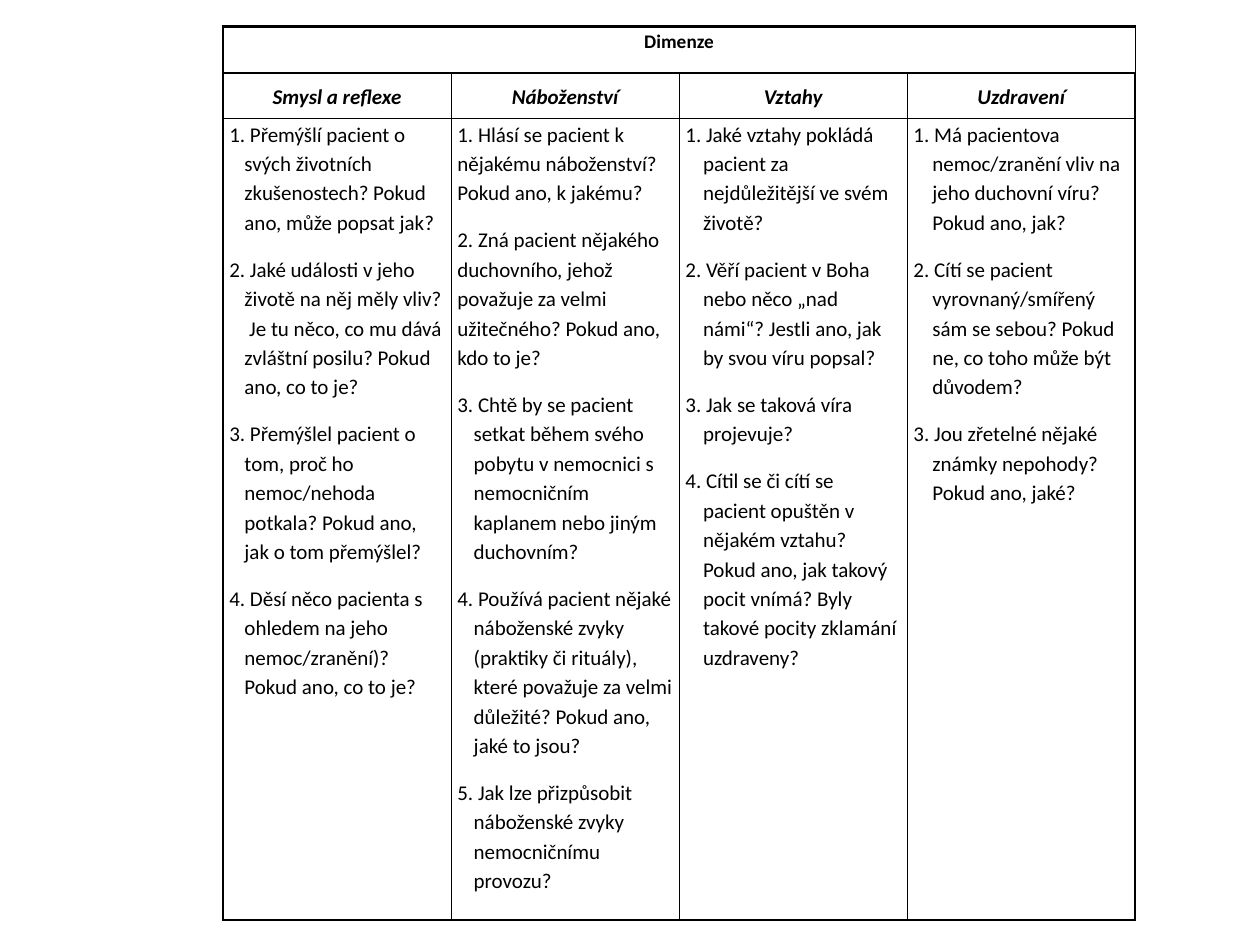
"""Build a slide with a table of spiritual assessment questions in four dimensions."""
from lxml.etree import SubElement
from pptx import Presentation
from pptx.dml.color import RGBColor
from pptx.enum.text import MSO_ANCHOR as Anchor, PP_ALIGN as Align
from pptx.oxml.ns import qn
from pptx.util import Inches, Pt

BLACK = RGBColor(0, 0, 0)
FONT = "Calibri"
OUTER_WIDTH, INNER_WIDTH = Pt(1.5), Pt(0.75)
ROW_HEIGHTS = (0.37, 0.36, 6.36)

DIMENSIONS = [
    ("Smysl a reflexe", 0.12, 0, [
        "1. Přemýšlí pacient o svých životních zkušenostech? Pokud ano, může popsat jak?",
        "2. Jaké události v jeho životě na něj měly vliv?  Je tu něco, co mu dává "
        "zvláštní posilu? Pokud ano, co to je?",
        "3. Přemýšlel pacient o tom, proč ho nemoc/nehoda potkala? Pokud ano, "
        "jak o tom přemýšlel?",
        "4. Děsí něco pacienta s ohledem na jeho nemoc/zranění)? Pokud ano, co to je?",
    ]),
    ("Náboženství", 0.13, 2, [
        "1. Hlásí se pacient k nějakému náboženství? Pokud ano, k jakému?",
        "2. Zná pacient nějakého duchovního, jehož považuje za velmi užitečného? "
        "Pokud ano, kdo to je?",
        "3. Chtě by se pacient setkat během svého pobytu v nemocnici "
        "s nemocničním kaplanem nebo jiným duchovním?",
        "4. Používá pacient nějaké náboženské zvyky (praktiky či rituály), "
        "které považuje za velmi důležité? Pokud ano, jaké to jsou?",
        "5. Jak lze přizpůsobit náboženské zvyky nemocničnímu provozu?",
    ]),
    ("Vztahy", 0.14, 0, [
        "1. Jaké vztahy pokládá pacient za nejdůležitější ve svém životě?",
        "2. Věří pacient v Boha nebo něco „nad námi“? Jestli ano, "
        "jak by svou víru popsal?",
        "3. Jak se taková víra projevuje?",
        "4. Cítil se či cítí se pacient opuštěn v nějakém vztahu? Pokud ano, "
        "jak takový pocit vnímá? Byly takové pocity zklamání uzdraveny?",
    ]),
    ("Uzdravení", 0.15, 0, [
        "1. Má pacientova nemoc/zranění vliv na jeho duchovní víru? Pokud ano, jak?",
        "2. Cítí se pacient vyrovnaný/smířený sám se sebou? Pokud ne, "
        "co toho může být důvodem?",
        "3. Jou zřetelné nějaké známky nepohody? Pokud ano, jaké?",
    ]),
]


def write_paragraph(paragraph, text, size=12, bold=False, italic=False, align=Align.LEFT):
    paragraph.alignment = align
    paragraph.line_spacing = 1.15
    paragraph.space_after = Pt(10)
    run = paragraph.add_run()
    run.text = text
    run.font.name = FONT
    run.font.size = Pt(size)
    run.font.bold = bold
    run.font.italic = italic
    run.font.color.rgb = BLACK


def add_border(cell_properties, side, width):
    line = SubElement(cell_properties, qn(f"a:{side}"), w=str(width))
    fill = SubElement(line, qn("a:solidFill"))
    SubElement(fill, qn("a:srgbClr"), val=str(BLACK))


presentation = Presentation()
presentation.slide_width = Inches(10)
presentation.slide_height = Inches(7.5)
slide = presentation.slides.add_slide(presentation.slide_layouts[6])

row_count, column_count = len(ROW_HEIGHTS), len(DIMENSIONS)
table = slide.shapes.add_table(
    row_count, column_count, Inches(1.77), Inches(0.21), Inches(7.24), Inches(7.09)
).table
table.first_row = False
table.horz_banding = False
for row, height in zip(table.rows, ROW_HEIGHTS):
    row.height = Inches(height)

for row_index in range(row_count):
    for column_index in range(column_count):
        cell = table.cell(row_index, column_index)
        cell.margin_left = cell.margin_right = Inches(0.05)
        cell.margin_top = cell.margin_bottom = 0
        cell_properties = cell._tc.get_or_add_tcPr()
        outer_sides = {
            "lnL": column_index == 0,
            "lnR": column_index == column_count - 1,
            "lnT": row_index == 0,
            "lnB": row_index == row_count - 1,
        }
        for side, is_outer in outer_sides.items():
            add_border(cell_properties, side, OUTER_WIDTH if is_outer else INNER_WIDTH)
        cell.fill.background()

heading_cell = table.cell(0, 0)
heading_cell.merge(table.cell(0, column_count - 1))
write_paragraph(
    heading_cell.text_frame.paragraphs[0], "Dimenze", size=11, bold=True, align=Align.CENTER
)

for column_index, (name, indent, flush_count, questions) in enumerate(DIMENSIONS):
    name_cell = table.cell(1, column_index)
    name_cell.vertical_anchor = Anchor.MIDDLE
    write_paragraph(
        name_cell.text_frame.paragraphs[0], name, bold=True, italic=True, align=Align.CENTER
    )
    text_frame = table.cell(2, column_index).text_frame
    for number, question in enumerate(questions):
        paragraph = text_frame.add_paragraph() if number else text_frame.paragraphs[0]
        write_paragraph(paragraph, question)
        if number >= flush_count:
            properties = paragraph._p.get_or_add_pPr()
            properties.set("marL", str(Inches(indent)))
            properties.set("indent", str(-Inches(indent)))

presentation.save("out.pptx")
